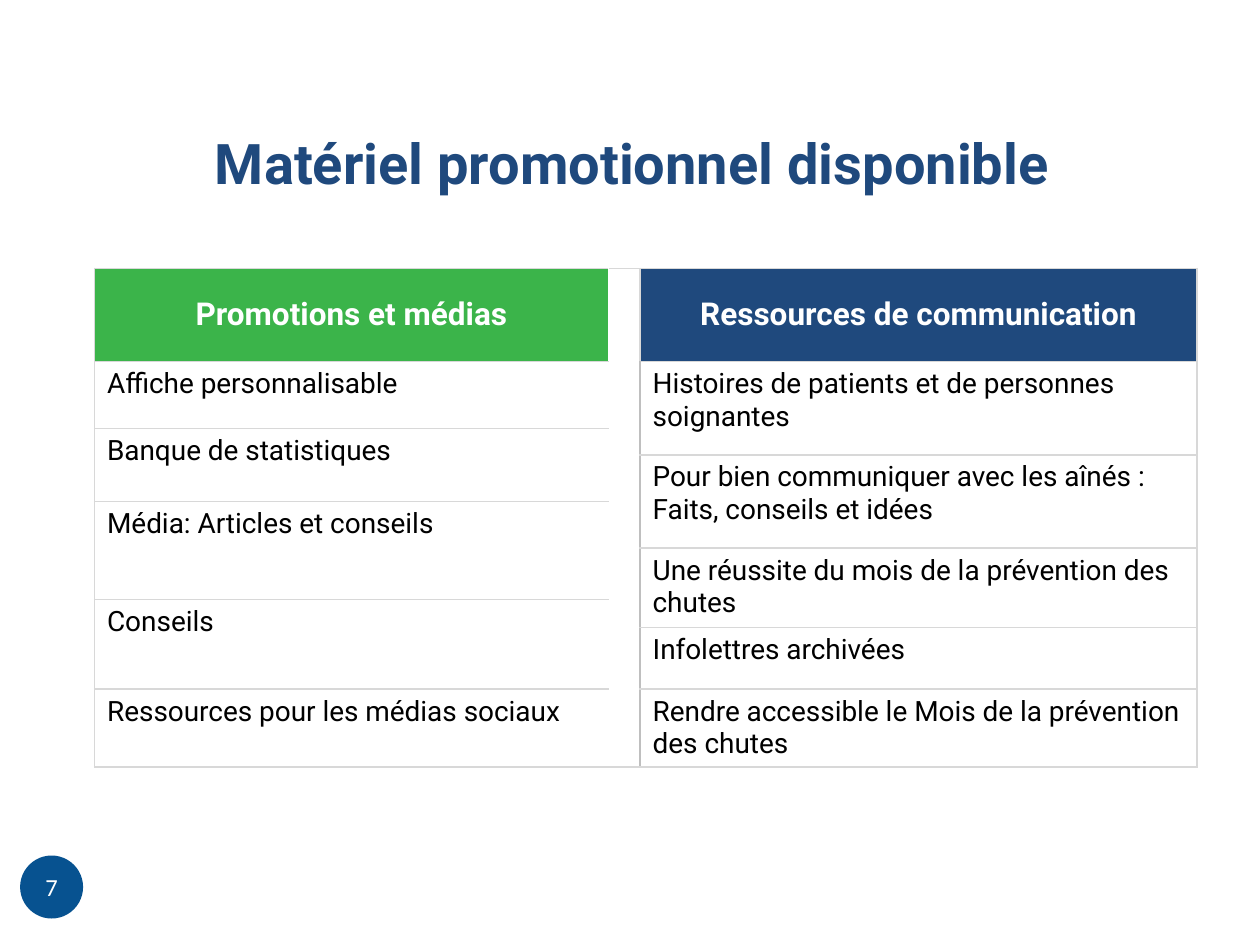
from lxml import etree
from pptx import Presentation
from pptx.dml.color import RGBColor
from pptx.enum.shapes import MSO_SHAPE
from pptx.enum.text import MSO_ANCHOR, PP_ALIGN
from pptx.oxml.ns import qn
from pptx.util import Inches, Pt

CENTER, LEFT = PP_ALIGN.CENTER, PP_ALIGN.LEFT
TOP, MIDDLE, BOTTOM = MSO_ANCHOR.TOP, MSO_ANCHOR.MIDDLE, MSO_ANCHOR.BOTTOM

COLORS = {"navy": "1F497D", "green": "3BB44A", "badge": "075290", "white": "FFFFFF",
          "black": "000000", "rule": "D8D8D8", "edge": "BFBFBF"}

TITLE = "Matériel promotionnel disponible"
PAGE = "7"
COL_WIDTHS = [4.08, 0.25, 4.42]
ROW_HEIGHTS = [0.74, 0.53, 0.21, 0.37, 0.37, 0.41, 0.22, 0.49, 0.62]

# Each column: grid column, header, header colour, left edge colour, sides, (text, rows spanned)
COLUMNS = [
    (0, "Promotions et médias", "green", "rule", "LTB", [
        ("Affiche personnalisable", 1),
        ("Banque de statistiques", 2),
        ("Média: Articles et conseils", 2),
        ("Conseils", 2),
        ("Ressources pour les médias sociaux", 1)]),
    (2, "Ressources de communication", "navy", "edge", "LRTB", [
        ("Histoires de patients et de personnes soignantes", 2),
        ("Pour bien communiquer avec les aînés : Faits, conseils et idées", 2),
        ("Une réussite du mois de la prévention des chutes", 2),
        ("Infolettres archivées", 1),
        ("Rendre accessible le Mois de la prévention des chutes", 1)]),
]


def rgb(name):
    return RGBColor.from_string(COLORS[name])


def write(tf, text, size=16, color="black", bold=False, align=LEFT, font="Roboto"):
    tf.word_wrap = True
    p = tf.paragraphs[0]
    p.alignment = align
    r = p.add_run()
    r.text = text
    r.font.name, r.font.size, r.font.bold = font, Pt(size), bold
    r.font.color.rgb = rgb(color)


def set_borders(cell, sides, left="rule"):
    tcPr = cell._tc.get_or_add_tcPr()
    for side in sides:
        ln = etree.SubElement(tcPr, qn(f"a:ln{side}"), w=str(Pt(1)))
        fill = etree.SubElement(ln, qn("a:solidFill"))
        color = COLORS[left if side == "L" else "rule"]
        etree.SubElement(fill, qn("a:srgbClr"), val=color)


def fill_cell(cell, color):
    cell.fill.solid()
    cell.fill.fore_color.rgb = rgb(color)


prs = Presentation()
prs.slide_width, prs.slide_height = Inches(10), Inches(7.5)
s = prs.slides.add_slide(prs.slide_layouts[5])

# Page number badge
sp = s.shapes.add_shape(MSO_SHAPE.OVAL, Inches(0.16), Inches(6.79), Inches(0.5), Inches(0.5))
sp.shadow.inherit = False
sp.fill.solid()
sp.fill.fore_color.rgb = rgb("badge")
sp.line.fill.background()
tf = sp.text_frame
tf.margin_left = tf.margin_right = tf.margin_top = tf.margin_bottom = 0
tf.vertical_anchor = MIDDLE
write(tf, PAGE, size=14, color="white", align=CENTER, font="Calibri")

# Title
title = s.shapes.title
title.left, title.top = Inches(0.77), Inches(0.35)
title.width, title.height = Inches(8.5), Inches(1.25)
title.text_frame.vertical_anchor = BOTTOM
write(title.text_frame, TITLE, size=32, color="navy", bold=True, align=CENTER)

# Table grid
table = s.shapes.add_table(len(ROW_HEIGHTS), len(COL_WIDTHS), Inches(0.75), Inches(2.13),
                           Inches(sum(COL_WIDTHS)), Inches(sum(ROW_HEIGHTS))).table
table.horz_banding = False
for col, width in zip(table.columns, COL_WIDTHS):
    col.width = Inches(width)
for row, height in zip(table.rows, ROW_HEIGHTS):
    row.height = Inches(height)

# Spacer column
last = len(ROW_HEIGHTS) - 1
spacer = table.cell(0, 1)
spacer.merge(table.cell(last, 1))
set_borders(spacer, "RTB")
fill_cell(spacer, "white")

# Header and item cells
for col, header, header_color, edge, sides, items in COLUMNS:
    row = 0
    for text, span in [(header, 1)] + items:
        is_header = row == 0
        cell = table.cell(row, col)
        if span > 1:
            cell.merge(table.cell(row + span - 1, col))
        for i in range(row, row + span):
            part = table.cell(i, col)
            set_borders(part, sides if i == row else sides.replace("T", ""),
                        "rule" if is_header else edge)
            fill_cell(part, header_color if is_header else "white")
        cell.vertical_anchor = MIDDLE if is_header else TOP
        write(cell.text_frame, text, size=18 if is_header else 16,
              color="white" if is_header else "black", bold=is_header,
              align=CENTER if is_header else LEFT)
        row += span

prs.save("out.pptx")
